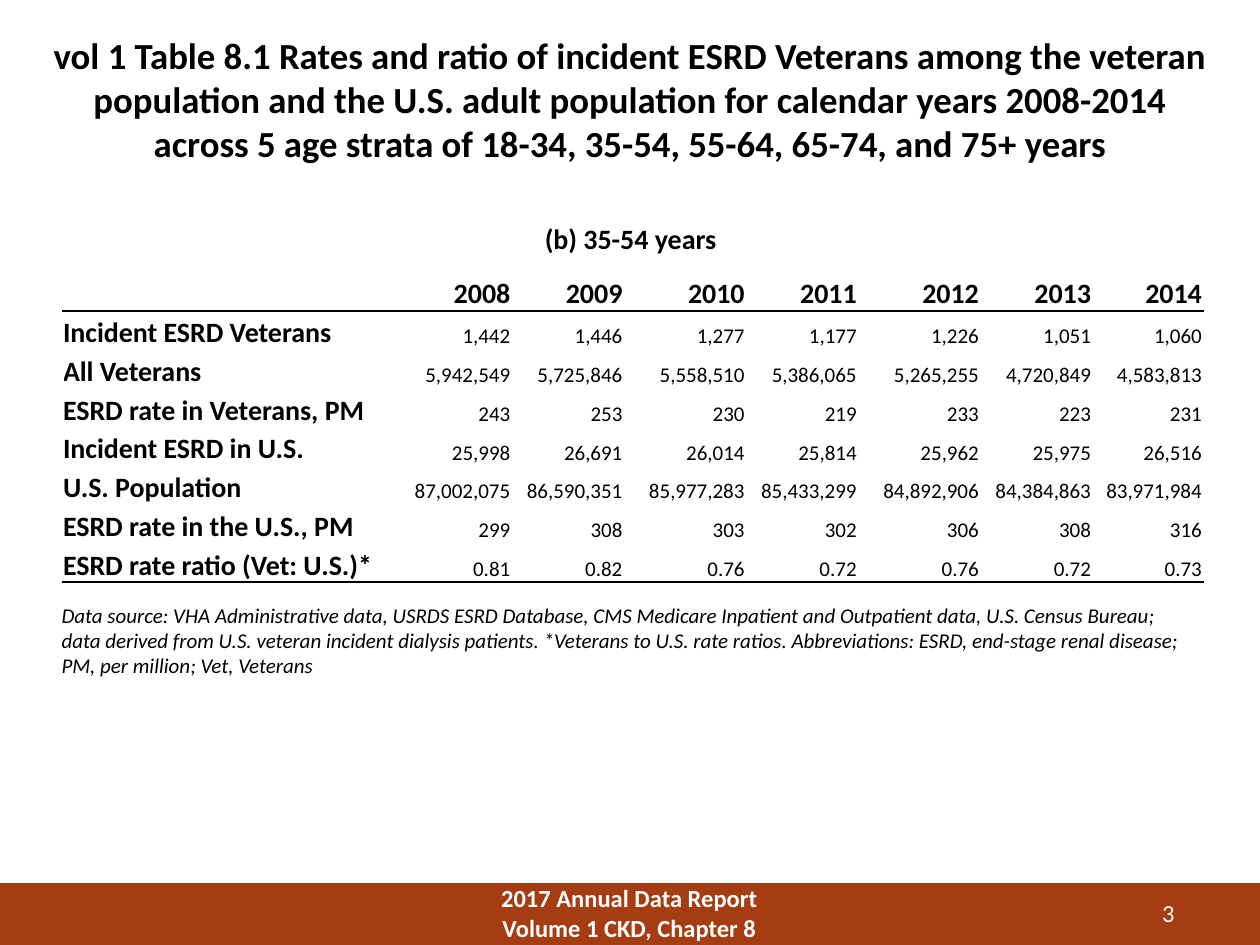
from lxml import etree
from pptx import Presentation
from pptx import util as u
from pptx.dml.color import RGBColor
from pptx.enum import shapes, text
from pptx.oxml.ns import qn

WIDTH, HEIGHT = 10, 7.5
BLACK, WHITE, RUST = "000000", "FFFFFF", "A63C12"
LEFT, CENTER, RIGHT = text.PP_ALIGN.LEFT, text.PP_ALIGN.CENTER, text.PP_ALIGN.RIGHT

TITLE = (
    "vol 1 Table 8.1 Rates and ratio of incident ESRD Veterans among the veteran "
    "population and the U.S. adult population for calendar years 2008-2014 "
    "across 5 age strata of 18-34, 35-54, 55-64, 65-74, and 75+ years"
)
SUBTITLE = "(b) 35-54 years"
SOURCE = (
    "Data source: VHA Administrative data, USRDS ESRD Database, CMS Medicare Inpatient "
    "and Outpatient data, U.S. Census Bureau; data derived from U.S. veteran incident "
    "dialysis patients. *Veterans to U.S. rate ratios. Abbreviations: ESRD, end-stage "
    "renal disease; PM, per million; Vet, Veterans"
)
FOOTER = ["2017 Annual Data Report", "Volume 1 CKD, Chapter 8"]
PAGE_NUMBER = "3"

ROWS = [
    ("", "2008", "2009", "2010", "2011", "2012", "2013", "2014"),
    ("Incident ESRD Veterans", "1,442", "1,446", "1,277", "1,177", "1,226", "1,051", "1,060"),
    ("All Veterans", "5,942,549", "5,725,846", "5,558,510", "5,386,065", "5,265,255",
     "4,720,849", "4,583,813"),
    ("ESRD rate in Veterans, PM", "243", "253", "230", "219", "233", "223", "231"),
    ("Incident ESRD in U.S.", "25,998", "26,691", "26,014", "25,814", "25,962", "25,975", "26,516"),
    ("U.S. Population", "87,002,075", "86,590,351", "85,977,283", "85,433,299", "84,892,906",
     "84,384,863", "83,971,984"),
    ("ESRD rate in the U.S., PM", "299", "308", "303", "302", "306", "308", "316"),
    ("ESRD rate ratio (Vet: U.S.)*", "0.81", "0.82", "0.76", "0.72", "0.76", "0.72", "0.73"),
]
COLUMN_WIDTHS = [2.51, 1.05, 0.89, 0.97, 0.89, 0.97, 0.89, 0.88]
RULES = {0: "lnB", 1: "lnT", len(ROWS) - 1: "lnB"}


def color(value):
    return RGBColor.from_string(value)


def add_span(para, words, size, ink=BLACK, bold=False, italic=False):
    span = para.add_run()
    span.text = words
    span.font.name = "Calibri"
    span.font.size = u.Pt(size)
    span.font.bold = bold
    span.font.italic = italic
    span.font.color.rgb = color(ink)


def add_text(page, place, lines, size, align=LEFT, wrap=True, **style):
    box = page.shapes.add_textbox(*map(u.Inches, place))
    frame = box.text_frame
    frame.word_wrap = wrap
    for index, line in enumerate(lines):
        para = frame.add_paragraph() if index else frame.paragraphs[0]
        para.alignment = align
        add_span(para, line, size, **style)


def add_rule(cell, side):
    line = etree.Element(qn(f"a:{side}"), w=str(u.Pt(1)))
    fill = etree.SubElement(line, qn("a:solidFill"))
    etree.SubElement(fill, qn("a:srgbClr"), val=BLACK)
    cell._tc.get_or_add_tcPr().insert(0, line)


def fill_cell(cell, words, row, column):
    heading = row == 0 or column == 0
    inset = u.Inches(0.01 if column else 0)
    cell.margin_left = cell.margin_right = cell.margin_top = inset
    cell.margin_bottom = 0
    cell.vertical_anchor = text.MSO_ANCHOR.MIDDLE if heading else text.MSO_ANCHOR.BOTTOM
    cell.fill.background()
    if row in RULES:
        add_rule(cell, RULES[row])
    if words:
        para = cell.text_frame.paragraphs[0]
        para.alignment = RIGHT if column else LEFT
        para.line_spacing = 1.15
        add_span(para, words, 16 if heading else 12, bold=heading)


def add_rates(page):
    place = (0.5, 2.15, sum(COLUMN_WIDTHS), 2.46)
    table = page.shapes.add_table(len(ROWS), len(COLUMN_WIDTHS), *map(u.Inches, place)).table
    table.first_row = table.horz_banding = False
    for column, width in zip(table.columns, COLUMN_WIDTHS):
        column.width = u.Inches(width)
    for row, values in enumerate(ROWS):
        for column, words in enumerate(values):
            fill_cell(table.cell(row, column), words, row, column)


def add_footer(page):
    top = 7.01
    band = page.shapes.add_shape(
        shapes.MSO_SHAPE.RECTANGLE, 0, u.Inches(top), u.Inches(WIDTH), u.Inches(HEIGHT - top))
    band.shadow.inherit = False
    band.fill.solid()
    band.fill.fore_color.rgb = color(RUST)
    band.line.fill.background()
    add_text(page, (3.58, 6.96, 2.83, 0.54), FOOTER, 14, CENTER, ink=WHITE, bold=True)
    add_text(page, (8.42, 7.08, 1, 0.3), [PAGE_NUMBER], 14, RIGHT, ink=WHITE)


def main():
    deck = Presentation()
    deck.slide_width, deck.slide_height = u.Inches(WIDTH), u.Inches(HEIGHT)
    page = deck.slides.add_slide(deck.slide_layouts[6])
    add_footer(page)
    add_text(page, (0.29, 0.21, 9.42, 1.24), [TITLE], 21, CENTER, bold=True)
    add_text(page, (4.21, 1.71, 1.59, 0.37), [SUBTITLE], 16, CENTER, wrap=False, bold=True)
    add_text(page, (0.39, 4.73, 9.23, 0.71), [SOURCE], 12, italic=True)
    add_rates(page)
    deck.save("out.pptx")


if __name__ == "__main__":
    main()
